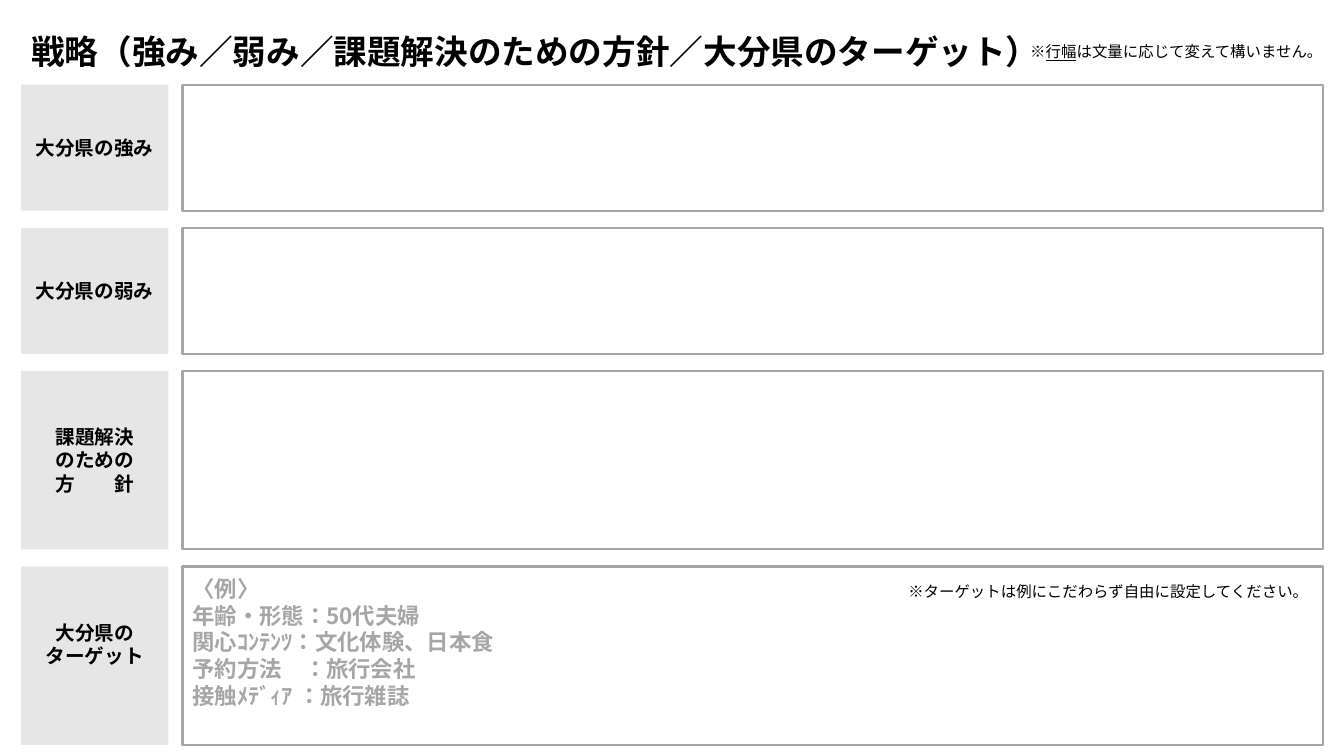
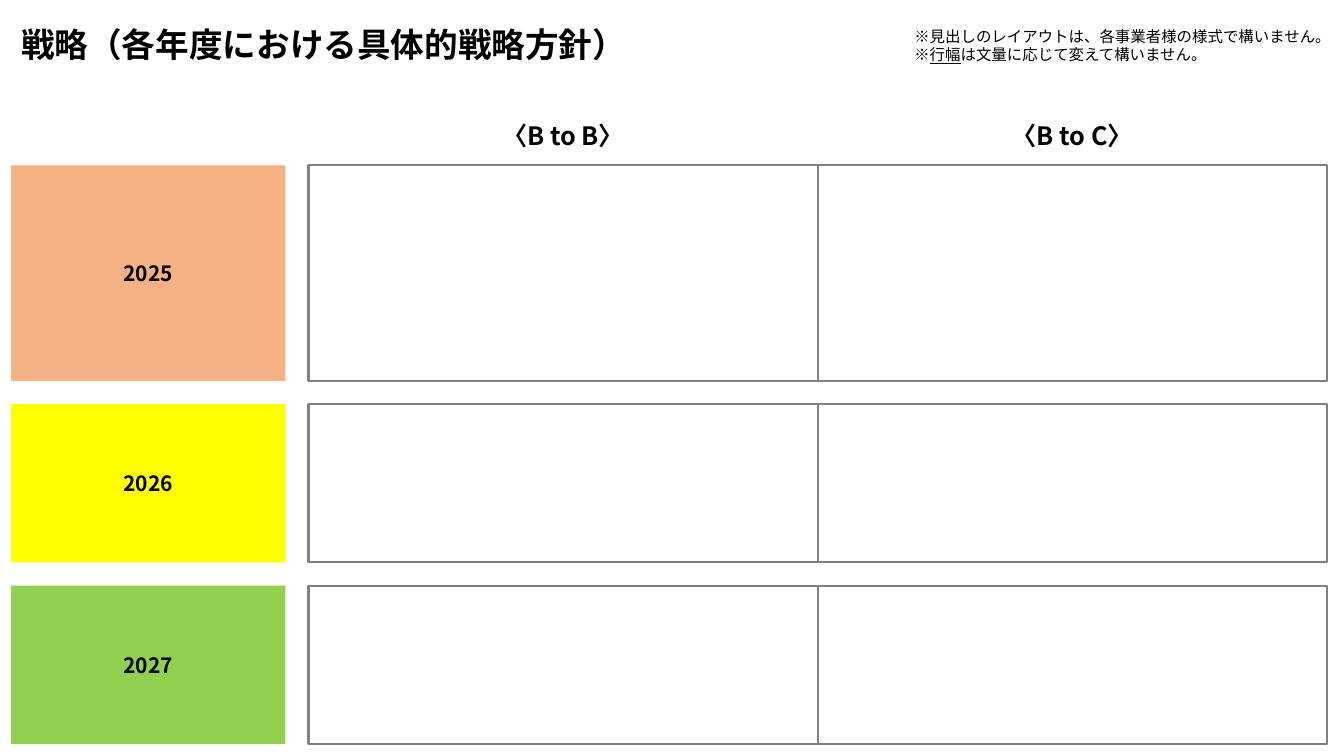
from lxml.etree import SubElement
from pptx import Presentation
from pptx.dml.color import RGBColor
from pptx.enum.lang import MSO_LANGUAGE_ID
from pptx.enum.shapes import MSO_CONNECTOR, MSO_SHAPE
from pptx.enum.text import MSO_ANCHOR, MSO_AUTO_SIZE, PP_ALIGN
from pptx.oxml.ns import qn
from pptx.util import Emu, Pt

PX = 9144  # 100 px to the inch
FONT = "Noto Sans CJK JP"
BLACK, WHITE, LABEL_GREY = "000000", "FFFFFF", "E7E6E6"
FRAME_GREY, GRID_GREY = "A6A6A6", "808080"

# Underscores enclose underlined words.
WIDTH_NOTE = "※_行幅_は文量に応じて変えて構いません。"

STRATEGY = {
    "title": "戦略（強み／弱み／課題解決のための方針／大分県のターゲット）",
    "title_box": (21, 26, 1185, 50),
    "notes": [
        ((1012, 37, 313, 29), [WIDTH_NOTE]),
        ((891, 573, 421, 29), ["※ターゲットは例にこだわらず自由に設定してください。"]),
    ],
    # label lines, row height, space under the label, example lines
    "rows": [
        (["大分県の強み"], 125, 5, []),
        (["大分県の弱み"], 125, 5, []),
        (["課題解決", "のための", "方　　針"], 177, 5, []),
        (["大分県の", "ターゲット"], 177, 28, [
            "〈例〉",
            "年齢・形態：50代夫婦",
            "関心ｺﾝﾃﾝﾂ：文化体験、日本食",
            "予約方法　：旅行会社",
            "接触ﾒﾃﾞｨｱ ：旅行雑誌",
        ]),
    ],
}

YEARLY = {
    "title": "戦略（各年度における具体的戦略方針）",
    "title_box": (11, 19, 829, 50),
    "notes": [
        ((897, 22, 437, 47),
         ["※見出しのレイアウトは、各事業者様の様式で構いません。", WIDTH_NOTE]),
    ],
    "columns": ["〈B to B〉", "〈B to C〉"],
    "rows": [("2025", 214, "F4B183"), ("2026", 157, "FFFF00"), ("2027", 157, "92D050")],
}


def px(*lengths):
    return [Emu(length * PX) for length in lengths]


def color(hex_string):
    return RGBColor.from_string(hex_string)


def write(shape, lines, size, bold=False, ink=BLACK, align=PP_ALIGN.LEFT,
          anchor=MSO_ANCHOR.TOP, spacing=None, space_below=5):
    frame = shape.text_frame
    frame.word_wrap = True
    frame.auto_size = MSO_AUTO_SIZE.NONE
    frame.vertical_anchor = anchor
    frame.margin_left, frame.margin_right = px(10, 10)
    frame.margin_top, frame.margin_bottom = px(5, space_below)
    for index, line in enumerate(lines):
        para = frame.add_paragraph() if index else frame.paragraphs[0]
        para.alignment = align
        if spacing:
            para.line_spacing = spacing
        for part, text in enumerate(line.split("_")):
            span = para.add_run()
            span.text = text
            font = span.font
            font.name, font.size, font.bold = FONT, Pt(size), bold
            font.color.rgb = color(ink)
            font.language_id = MSO_LANGUAGE_ID.JAPANESE
            if part % 2:
                font.underline = True
            east_asian = SubElement(span._r.get_or_add_rPr(), qn("a:ea"))
            east_asian.set("typeface", FONT)


def add_box(page, box, fill, line=None):
    shape = page.shapes.add_shape(MSO_SHAPE.RECTANGLE, *px(*box))
    shape.shadow.inherit = False
    shape.fill.solid()
    shape.fill.fore_color.rgb = color(fill)
    if line:
        shape.line.color.rgb = color(line)
        shape.line.width = Pt(1.5)
    else:
        shape.line.fill.background()
    return shape


def add_label(page, box, fill, lines, size, space_below=5):
    write(add_box(page, box, fill), lines, size, bold=True, align=PP_ALIGN.CENTER,
          anchor=MSO_ANCHOR.MIDDLE, space_below=space_below)


def add_divider(page, frame):
    """Split a frame into two halves with a vertical line."""
    divider = page.shapes.add_connector(MSO_CONNECTOR.STRAIGHT, 0, 0, 0, 0)
    divider.begin_connect(frame, 0)
    divider.end_connect(frame, 2)
    divider.line.color.rgb = color(GRID_GREY)
    divider.line.width = Pt(1.5)
    SubElement(divider._element.spPr, qn("a:effectLst"))


def add_page(deck, content):
    """Add a slide with its title and notes."""
    page = deck.slides.add_slide(deck.slide_layouts[5])
    title = page.shapes.title
    title.left, title.top, title.width, title.height = px(*content["title_box"])
    write(title, [content["title"]], 24, bold=True)
    return page


def add_notes(page, content):
    for box, lines in content["notes"]:
        write(page.shapes.add_textbox(*px(*box)), lines, 11)


def stack(rows, top, gap):
    """Yield each row with its top edge."""
    for row in rows:
        yield top, row
        top += row[1] + gap


def build_strategy(deck):
    page = add_page(deck, STRATEGY)
    for top, (label, height, space_below, example) in stack(STRATEGY["rows"], 84, 17):
        add_label(page, (21, top, 146, height), LABEL_GREY, label, 14, space_below)
        frame = add_box(page, (181, top, 1131, height), WHITE, FRAME_GREY)
        if example:
            write(frame, example, 16, bold=True, ink=FRAME_GREY,
                  anchor=MSO_ANCHOR.MIDDLE, space_below=32)
    add_notes(page, STRATEGY)


def build_yearly(deck):
    page = add_page(deck, YEARLY)
    left, column_width = 306, 505
    for index, heading in enumerate(YEARLY["columns"]):
        box = (left + index * column_width, 107, column_width, 58)
        write(page.shapes.add_textbox(*px(*box)), [heading], 18, bold=True,
              align=PP_ALIGN.CENTER, anchor=MSO_ANCHOR.MIDDLE, spacing=0.9)
    for top, (year, height, fill) in stack(YEARLY["rows"], 164, 23):
        add_label(page, (11, top, 272, height), fill, [year], 15)
        frame = add_box(page, (left, top, 2 * column_width, height), WHITE, GRID_GREY)
        add_divider(page, frame)
    add_notes(page, YEARLY)


def main():
    deck = Presentation()
    deck.slide_width, deck.slide_height = px(1333, 750)
    build_strategy(deck)
    build_yearly(deck)
    deck.save("out.pptx")


if __name__ == "__main__":
    main()
